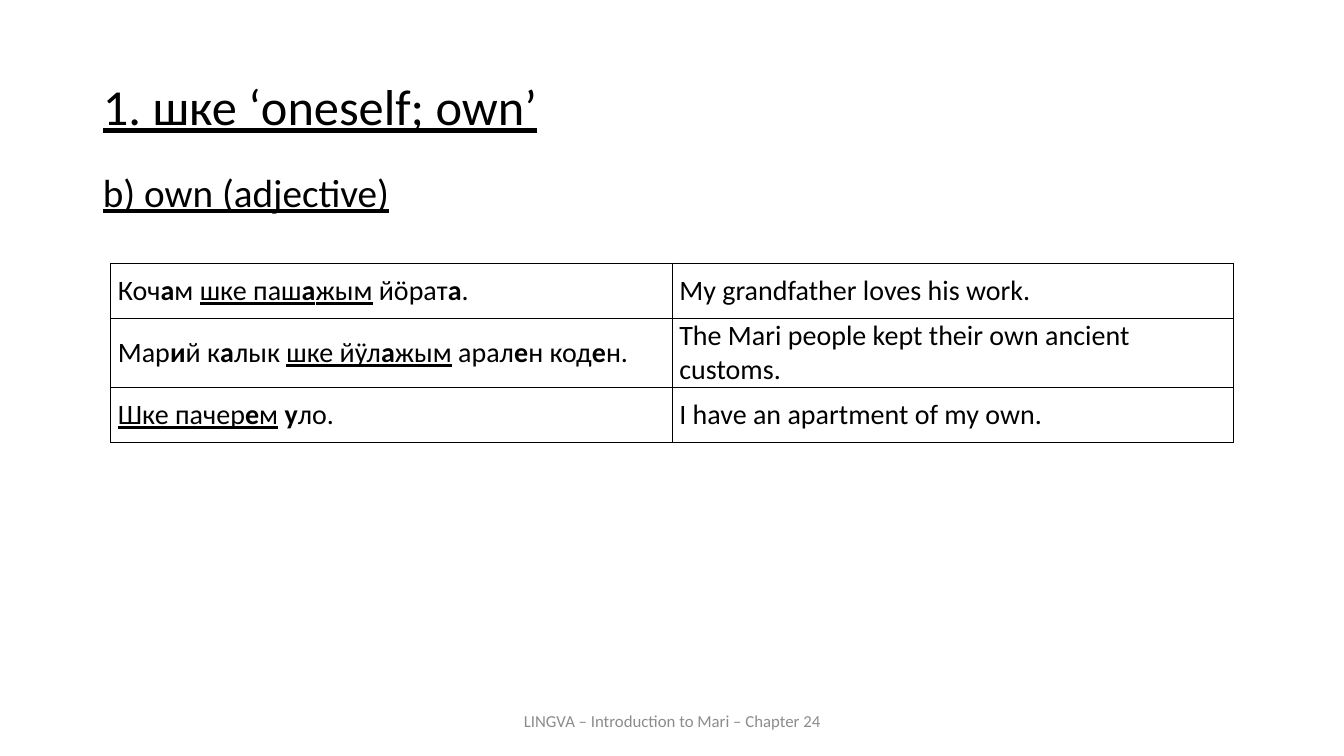
from lxml import etree
from pptx import Presentation
from pptx import util as u
from pptx.dml.color import RGBColor
from pptx.enum import text
from pptx.oxml import ns

BLACK = RGBColor(0x00, 0x00, 0x00)
GREY = RGBColor(0x8C, 0x8C, 0x8C)
WHITE = RGBColor(0xFF, 0xFF, 0xFF)
FONT = "Calibri"

EXAMPLES = [
    ("Коч*а*м _шке паш*а*жым_ йӧрат*а*.", "My grandfather loves his work."),
    ("Мар*и*й к*а*лык _шке йӱл*а*жым_ арал*е*н код*е*н.",
     "The Mari people kept their own ancient customs."),
    ("_Шке пачер*е*м_ *у*ло.", "I have an apartment of my own."),
]


def place(sp, box):
    sp.left, sp.top, sp.width, sp.height = [u.Cm(v) for v in box]


def style_run(r, size, color=BLACK, bold=False, underline=False):
    r.font.name = FONT
    r.font.size = u.Pt(size)
    r.font.color.rgb = color
    r.font.bold = bold
    r.font.underline = underline


def add_heading(sp, box, content, size, space_before, align):
    place(sp, box)
    tf = sp.text_frame
    tf.text = content
    tf.word_wrap = True
    tf.auto_size = text.MSO_AUTO_SIZE.NONE
    tf.vertical_anchor = text.MSO_ANCHOR.TOP
    p = tf.paragraphs[0]
    p.alignment = align
    p.line_spacing = 0.9
    p.space_before = u.Pt(space_before)
    style_run(p.runs[0], size, underline=True)
    pPr = p._p.get_or_add_pPr()
    pPr.set("marL", "0")
    pPr.set("indent", "0")
    etree.SubElement(pPr, ns.qn("a:buNone"))


def add_borders(cell):
    tcPr = cell._tc.get_or_add_tcPr()
    for side in ("lnL", "lnR", "lnT", "lnB"):
        ln = etree.SubElement(tcPr, ns.qn(f"a:{side}"), w=str(u.Pt(1)))
        fill = etree.SubElement(ln, ns.qn("a:solidFill"))
        etree.SubElement(fill, ns.qn("a:srgbClr"), val=str(BLACK))


def fill_cell(cell, marked):
    cell.margin_left = cell.margin_right = u.Cm(0.18)
    cell.margin_top = cell.margin_bottom = 0
    cell.vertical_anchor = text.MSO_ANCHOR.MIDDLE
    add_borders(cell)
    cell.fill.solid()
    cell.fill.fore_color.rgb = WHITE
    p = cell.text_frame.paragraphs[0]
    for i, phrase in enumerate(marked.split("_")):
        for j, part in enumerate(phrase.split("*")):
            if part:
                r = p.add_run()
                r.text = part
                style_run(r, 20, bold=j % 2 == 1, underline=i % 2 == 1)


def add_examples(s, box):
    frame = s.shapes.add_table(len(EXAMPLES), 2, *[u.Cm(v) for v in box])
    table = frame.table
    table.first_row = table.horz_banding = False
    for row, pair in zip(table.rows, EXAMPLES):
        row.height = u.Cm(1.4)
        for cell, marked in zip(row.cells, pair):
            fill_cell(cell, marked)


def add_footer(s, box):
    sp = s.shapes.add_textbox(*[u.Cm(v) for v in box])
    tf = sp.text_frame
    tf.text = "LINGVA – Introduction to Mari – Chapter 24"
    tf.word_wrap = True
    tf.vertical_anchor = text.MSO_ANCHOR.MIDDLE
    p = tf.paragraphs[0]
    p.alignment = text.PP_ALIGN.CENTER
    style_run(p.runs[0], 12, GREY)


def main():
    prs = Presentation()
    prs.slide_width, prs.slide_height = u.Cm(33.87), u.Cm(19.05)
    s = prs.slides.add_slide(prs.slide_layouts[1])
    add_heading(s.shapes.title, (2.34, 1.93, 29.21, 2.11),
                "1. шке ‘oneself; own’", 36, 12, text.PP_ALIGN.JUSTIFY)
    add_heading(s.placeholders[1], (2.34, 4.24, 29.21, 1.47),
                "b) own (adjective)", 28, 10, text.PP_ALIGN.LEFT)
    add_examples(s, (2.79, 6.63, 28.3, 4.2))
    add_footer(s, (11.23, 17.65, 11.43, 1.02))
    prs.save("out.pptx")


if __name__ == "__main__":
    main()
